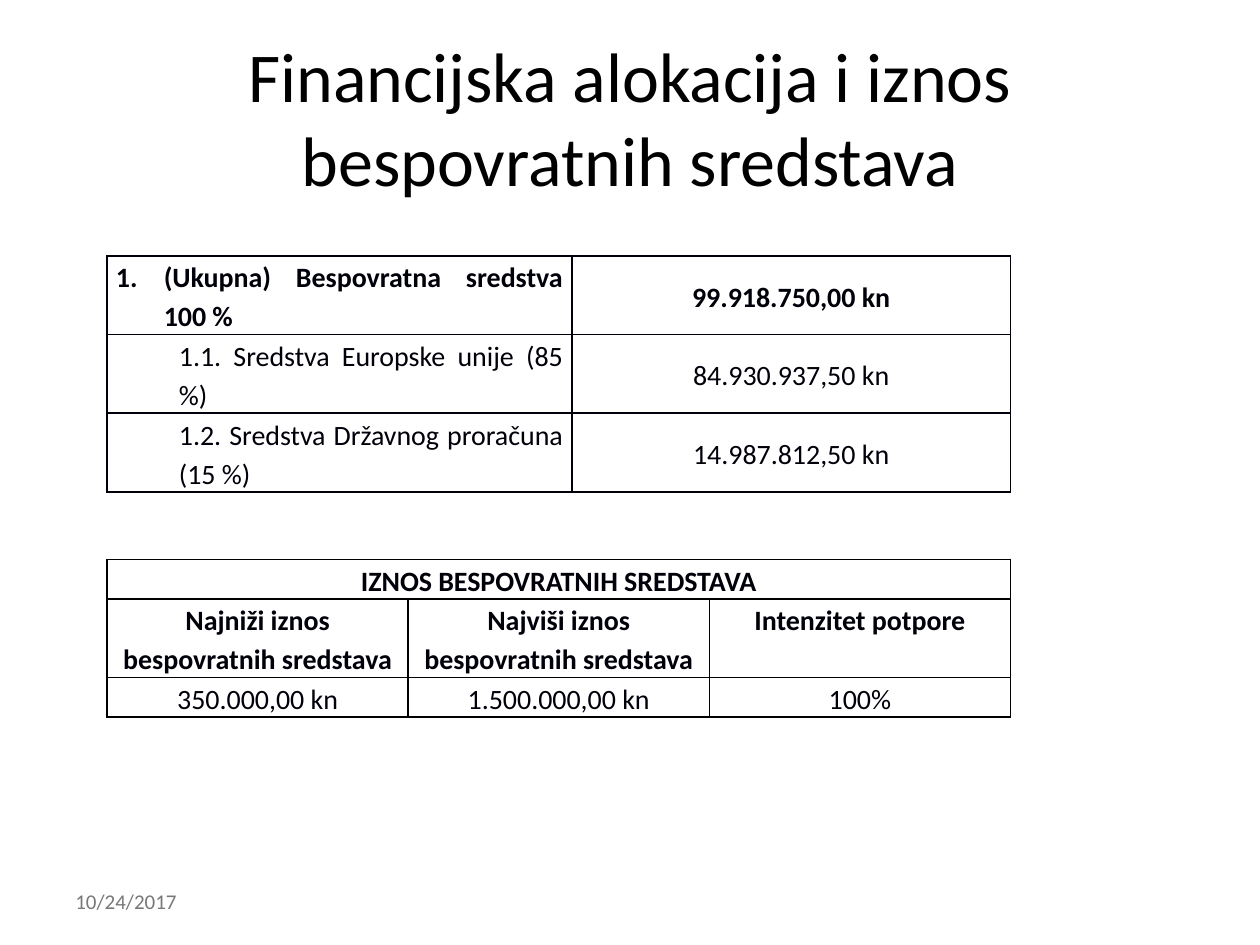
import pptx
import pptx.dml.color
import pptx.enum.text
import pptx.oxml
import pptx.oxml.ns
import pptx.util
from pptx.util import Inches

COLORS = {"title": "000000", "text": "00000A", "cell": "FFFFFF",
          "funds border": "00000A", "grant border": "000000", "date": "777877"}
ALIGN = pptx.enum.text.PP_ALIGN
ANCHOR = pptx.enum.text.MSO_ANCHOR


def format_runs(para, size, color, bold=False):
    for span in para.runs:
        span.font.name = "Calibri"
        span.font.size = pptx.util.Pt(size)
        span.font.bold = bold
        span.font.color.rgb = pptx.dml.color.RGBColor.from_string(COLORS[color])


def add_grid(page, rows, top, widths, heights, border, bold_rows, anchor):
    """Add a bordered table of centred text and return it."""
    table = page.shapes.add_table(len(rows), len(widths), Inches(0.85), Inches(top),
                                  Inches(sum(widths)), Inches(sum(heights))).table
    table.first_row = table.horz_banding = False
    for column, width in zip(table.columns, widths):
        column.width = Inches(width)
    for row, height in zip(table.rows, heights):
        row.height = Inches(height)
    for r, texts in enumerate(rows):
        for c, text in enumerate(texts):
            cell = table.cell(r, c)
            cell.margin_left = cell.margin_right = Inches(0.07)
            cell.margin_top = cell.margin_bottom = 0
            cell.vertical_anchor = anchor
            properties = cell._tc.get_or_add_tcPr()
            for side in ("lnL", "lnR", "lnT", "lnB"):
                properties.append(pptx.oxml.parse_xml(
                    f'<a:{side} {pptx.oxml.ns.nsdecls("a")} w="12700"><a:solidFill>'
                    f'<a:srgbClr val="{COLORS[border]}"/></a:solidFill></a:{side}>'))
            cell.fill.solid()
            cell.fill.fore_color.rgb = pptx.dml.color.RGBColor.from_string(COLORS["cell"])
            cell.text_frame.text = text
            para = cell.text_frame.paragraphs[0]
            para.alignment = ALIGN.CENTER
            para.line_spacing = 1.15
            format_runs(para, 16, "text", r in bold_rows)
    return table


deck = pptx.Presentation()
deck.slide_width, deck.slide_height = Inches(10), Inches(7.5)
page = deck.slides.add_slide(deck.slide_layouts[5])

title = page.shapes.title
title.left, title.top, title.width, title.height = map(Inches, (0.5, 0.3, 9, 1.25))
title.text_frame.text = "Financijska alokacija i iznos bespovratnih sredstava"
title.text_frame.vertical_anchor = ANCHOR.MIDDLE
title.text_frame.paragraphs[0].alignment = ALIGN.CENTER
format_runs(title.text_frame.paragraphs[0], 40, "title")

# Sources of the funds
funds = add_grid(page, [
    ("(Ukupna) Bespovratna sredstva 100 %", "99.918.750,00 kn"),
    ("1.1. Sredstva Europske unije (85 %)", "84.930.937,50 kn"),
    ("1.2. Sredstva Državnog proračuna (15 %)", "14.987.812,50 kn"),
], 2.03, [3.69, 3.48], [0.62] * 3, "funds border", {0}, ANCHOR.MIDDLE)
for r, (margin, indent) in enumerate([(0.38, -0.38), (0.5, 0), (0.5, 0)]):
    para = funds.cell(r, 0).text_frame.paragraphs[0]
    para.alignment = ALIGN.JUSTIFY
    properties = para._p.get_or_add_pPr()
    properties.set("marL", str(Inches(margin)))
    properties.set("indent", str(Inches(indent)))
    if indent:
        properties.append(pptx.oxml.parse_xml(
            f'<a:buAutoNum {pptx.oxml.ns.nsdecls("a")} type="arabicPeriod"/>'))

# Size of a single grant
grant = add_grid(page, [
    ("IZNOS BESPOVRATNIH SREDSTAVA", "", ""),
    ("Najniži iznos bespovratnih sredstava", "Najviši iznos bespovratnih sredstava",
     "Intenzitet potpore"),
    ("350.000,00 kn", "1.500.000,00 kn", "100%"),
], 4.44, [2.39] * 3, [0.31, 0.62, 0.31], "grant border", {0, 1}, ANCHOR.TOP)
grant.cell(0, 0).merge(grant.cell(0, 2))

date = page.shapes.add_textbox(Inches(0.5), Inches(6.95), Inches(2.33), Inches(0.4))
date.text_frame.word_wrap = True
date.text_frame.vertical_anchor = ANCHOR.MIDDLE
date.text_frame.text = "10/24/2017"
format_runs(date.text_frame.paragraphs[0], 12, "date")

deck.save("out.pptx")
